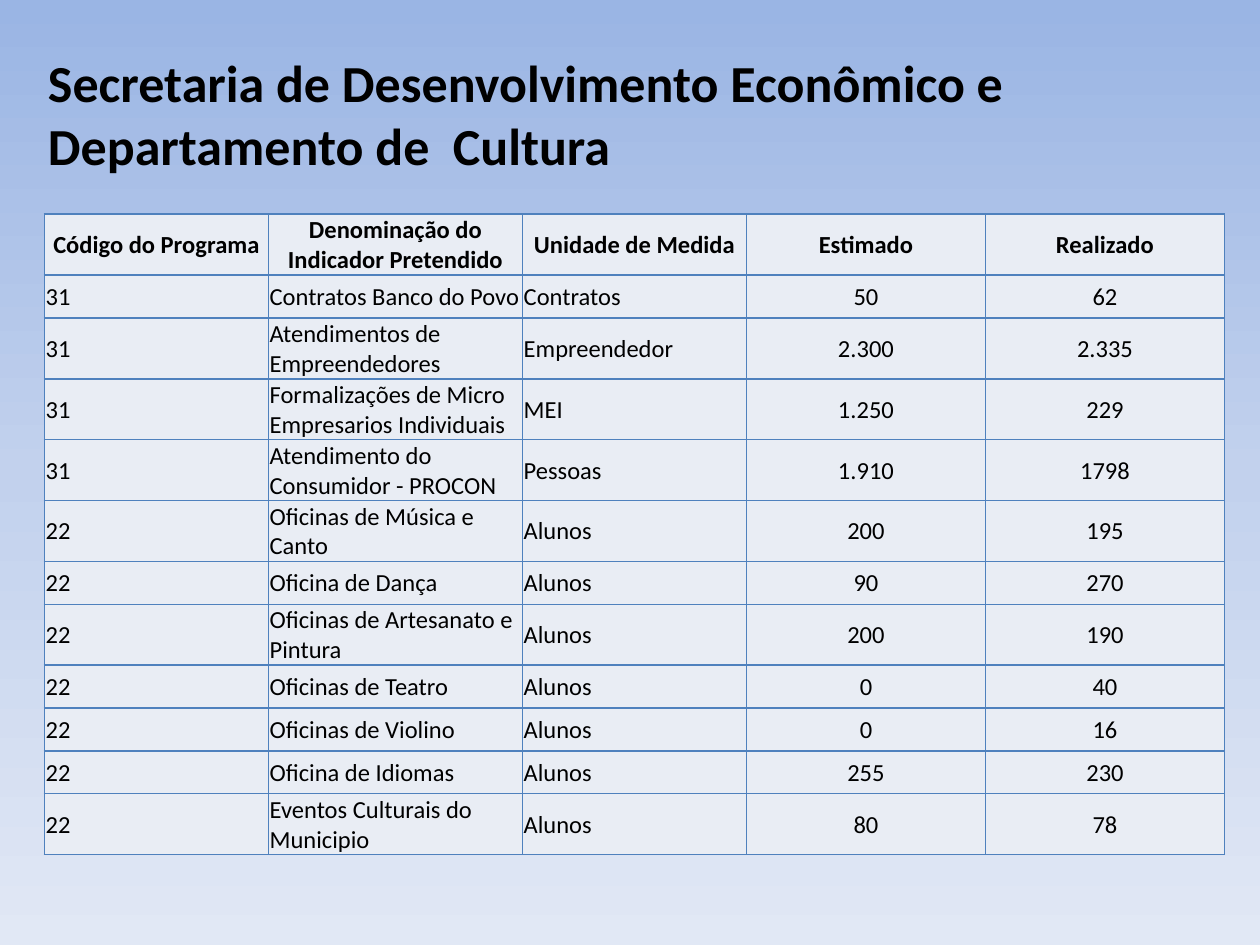
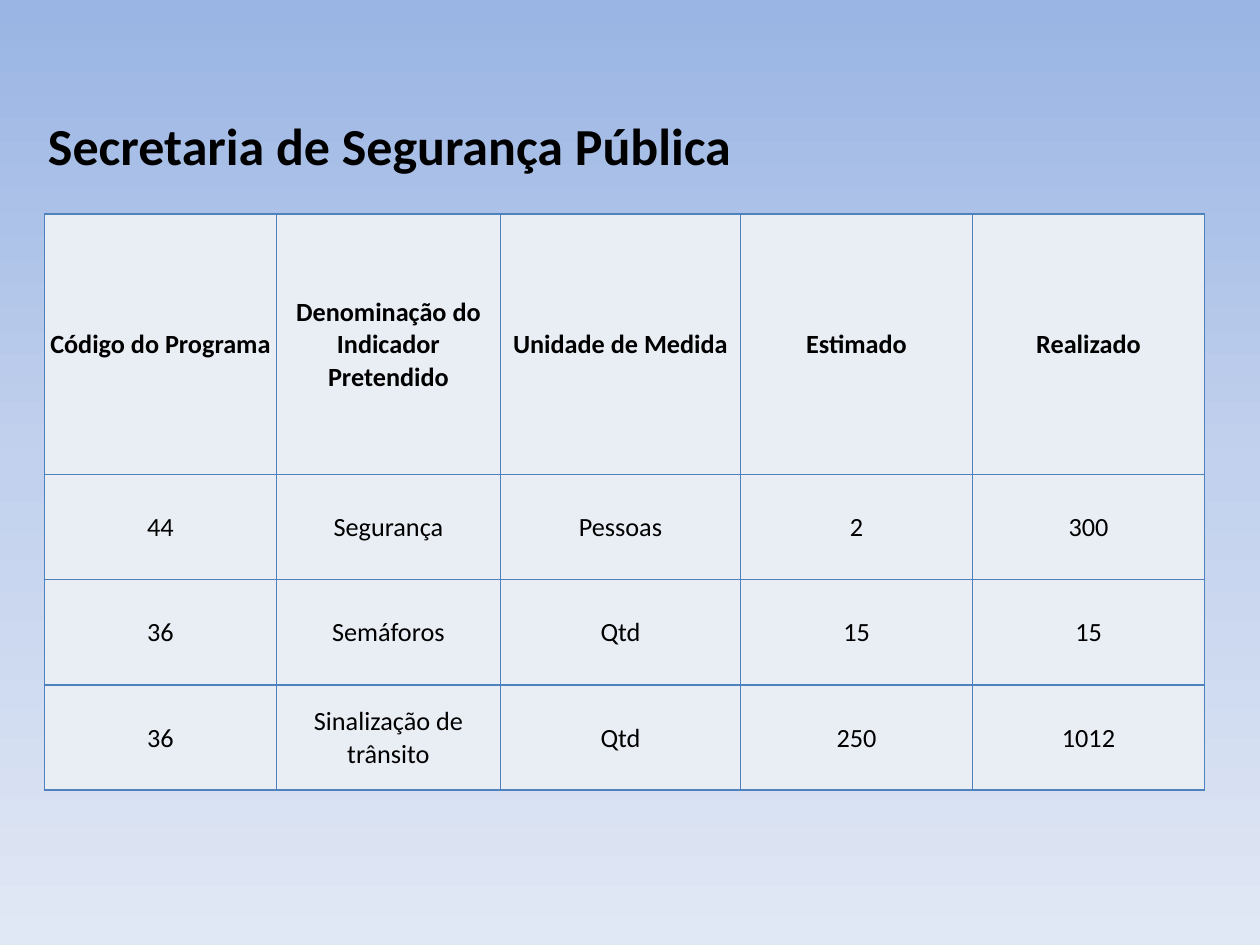
from copy import deepcopy
from dataclasses import dataclass

from lxml import etree
from pptx import Presentation
from pptx.dml.color import RGBColor
from pptx.enum.text import MSO_ANCHOR, MSO_AUTO_SIZE, PP_ALIGN
from pptx.oxml.ns import qn
from pptx.util import Pt

LEFT, CENTER = PP_ALIGN.LEFT, PP_ALIGN.CENTER
MIDDLE, BOTTOM = MSO_ANCHOR.MIDDLE, MSO_ANCHOR.BOTTOM
NO_AUTOFIT = MSO_AUTO_SIZE.NONE
TITLE_ONLY = 5

# Content
HEADINGS = ("Código do Programa", "Denominação do Indicador Pretendido",
            "Unidade de Medida", "Estimado", "Realizado")

CULTURE_ROWS = [
    ("31", "Contratos Banco do Povo", "Contratos", "50", "62"),
    ("31", "Atendimentos de Empreendedores", "Empreendedor", "2.300", "2.335"),
    ("31", "Formalizações de Micro Empresarios Individuais", "MEI", "1.250", "229"),
    ("31", "Atendimento do Consumidor - PROCON", "Pessoas", "1.910", "1798"),
    ("22", "Oficinas de Música e Canto", "Alunos", "200", "195"),
    ("22", "Oficina de Dança", "Alunos", "90", "270"),
    ("22", "Oficinas de Artesanato e Pintura", "Alunos", "200", "190"),
    ("22", "Oficinas de Teatro", "Alunos", "0", "40"),
    ("22", "Oficinas de Violino", "Alunos", "0", "16"),
    ("22", "Oficina de Idiomas", "Alunos", "255", "230"),
    ("22", "Eventos Culturais do Municipio", "Alunos", "80", "78"),
]

SECURITY_ROWS = [
    ("44", "Segurança", "Pessoas", "2", "300"),
    ("36", "Semáforos", "Qtd", "15", "15"),
    ("36", "Sinalização de trânsito", "Qtd", "250", "1012"),
]

# Row heights: header, one-line row, two-line row
DEPARTMENTS = [
    dict(title="Secretaria de Desenvolvimento Econômico e Departamento de  Cultura",
         rows=CULTURE_ROWS, size=14, widths=(128, 145.2, 128, 136.6, 136.6),
         heights=(34.8, 24.5, 34.8), text_align=LEFT),
    dict(title="Secretaria de Segurança Pública",
         rows=SECURITY_ROWS, size=15, widths=(132.6, 128, 137.2, 132.6, 132.6),
         heights=(148.8, 60.1, 60.1), text_align=CENTER),
]


@dataclass(frozen=True)
class Theme:
    font: str = "Calibri"
    title_size: float = 29.7
    text: str = "000000"
    cell: str = "E9EDF4"
    border: str = "4F81BD"
    border_width: float = 1
    gradient: tuple = ((0, "9AB5E4"), (0.5, "C2D1ED"), (1, "E1E8F5"))


THEME = Theme()
TITLE_BOX = (20.2, 24, 612, 80)
TABLE_LEFT, TABLE_TOP = 25.4, 122.4
CELL_INSET = 0.7
ONE_LINE_CHARS = 23


# Shared styling
def paint_background(master):
    fill = master.background.fill
    fill.gradient()
    fill.gradient_angle = 270
    stop_list = fill.gradient_stops[0]._gs.getparent()
    stop_list.append(deepcopy(stop_list[-1]))
    for stop, (position, color) in zip(fill.gradient_stops, THEME.gradient):
        stop.position = position
        stop.color.rgb = RGBColor.from_string(color)


def style_text(paragraph, size, bold, align):
    paragraph.alignment = align
    for run in paragraph.runs:
        run.font.name = THEME.font
        run.font.size = Pt(size)
        run.font.bold = bold
        run.font.color.rgb = RGBColor.from_string(THEME.text)


def add_borders(cell):
    properties = cell._tc.get_or_add_tcPr()
    for index, side in enumerate(("lnL", "lnR", "lnT", "lnB")):
        line = etree.Element(qn(f"a:{side}"), w=str(Pt(THEME.border_width)))
        solid = etree.SubElement(line, qn("a:solidFill"))
        etree.SubElement(solid, qn("a:srgbClr"), val=THEME.border)
        properties.insert(index, line)


def fill_cell(cell, text, size, bold, align):
    cell.text_frame.text = text
    style_text(cell.text_frame.paragraphs[0], size, bold, align)
    cell.vertical_anchor = MIDDLE
    cell.margin_left = cell.margin_right = cell.margin_top = Pt(CELL_INSET)
    cell.margin_bottom = 0
    cell.fill.solid()
    cell.fill.fore_color.rgb = RGBColor.from_string(THEME.cell)
    add_borders(cell)


# Slide parts
def add_title(slide, text):
    title = slide.shapes.title
    title.left, title.top, title.width, title.height = map(Pt, TITLE_BOX)
    frame = title.text_frame
    frame.text = text
    frame.word_wrap = True
    frame.auto_size = NO_AUTOFIT
    frame.vertical_anchor = BOTTOM
    style_text(frame.paragraphs[0], THEME.title_size, True, LEFT)


def add_indicators(slide, rows, size, widths, heights, text_align):
    header, one_line, two_lines = heights
    row_heights = [header] + [two_lines if len(row[1]) > ONE_LINE_CHARS else one_line
                              for row in rows]
    table = slide.shapes.add_table(
        len(row_heights), len(widths), Pt(TABLE_LEFT), Pt(TABLE_TOP),
        Pt(sum(widths)), Pt(sum(row_heights))).table
    for column, width in zip(table.columns, widths):
        column.width = Pt(width)
    for table_row, height in zip(table.rows, row_heights):
        table_row.height = Pt(height)

    for r, values in enumerate([HEADINGS, *rows]):
        for c, value in enumerate(values):
            is_heading = r == 0
            align = CENTER if is_heading or c >= 3 else text_align
            fill_cell(table.cell(r, c), value, size, is_heading, align)


def main():
    prs = Presentation()
    prs.slide_width, prs.slide_height = Pt(720), Pt(540)
    paint_background(prs.slide_master)
    for department in DEPARTMENTS:
        slide = prs.slides.add_slide(prs.slide_layouts[TITLE_ONLY])
        add_title(slide, department["title"])
        add_indicators(slide, **{key: value for key, value in department.items()
                                 if key != "title"})
    prs.save("out.pptx")


if __name__ == "__main__":
    main()
